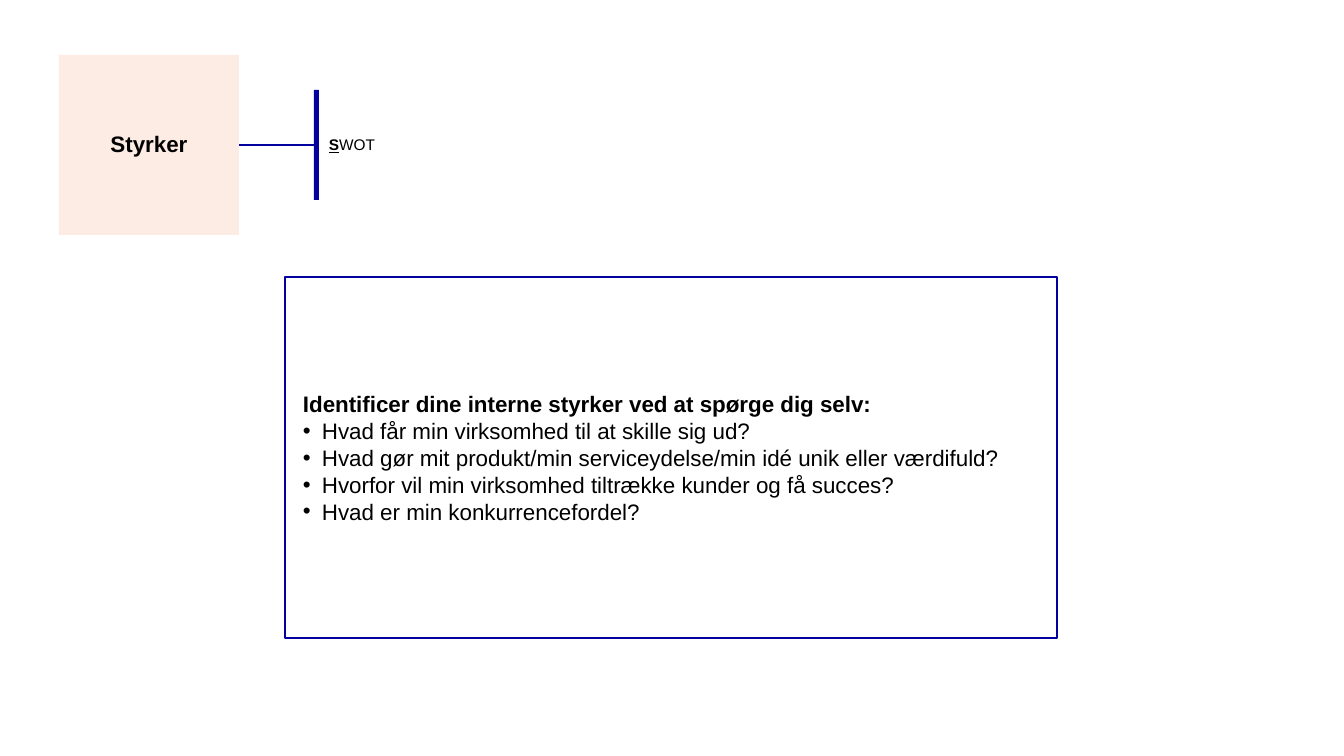
from lxml.etree import SubElement
from pptx import Presentation
from pptx.dml.color import RGBColor
from pptx.enum.shapes import MSO_CONNECTOR, MSO_SHAPE
from pptx.enum.text import MSO_ANCHOR, MSO_AUTO_SIZE, PP_ALIGN
from pptx.oxml.ns import qn
from pptx.util import Pt

EMU_PER_PX = 914400 / 100.8
BLUE = RGBColor(0x03, 0x00, 0x9F)
PEACH = RGBColor(0xFD, 0xEC, 0xE3)
BLACK = RGBColor(0, 0, 0)
FONT = "Arial"

HEADING = "Identificer dine interne styrker ved at spørge dig selv:"
QUESTIONS = [
    "Hvad får min virksomhed til at skille sig ud?",
    "Hvad gør mit produkt/min serviceydelse/min idé unik eller værdifuld?",
    "Hvorfor vil min virksomhed tiltrække kunder og få succes?",
    "Hvad er min konkurrencefordel?",
]


def px(length):
    return round(length * EMU_PER_PX)


def add_rectangle(slide, left, top, width, height, fill=None, line=None):
    shape = slide.shapes.add_shape(
        MSO_SHAPE.RECTANGLE, px(left), px(top), px(width), px(height))
    shape.shadow.inherit = False
    if fill is None:
        shape.fill.background()
    else:
        shape.fill.solid()
        shape.fill.fore_color.rgb = fill
    if line is None:
        shape.line.fill.background()
    else:
        shape.line.color.rgb = line
        shape.line.width = Pt(1)
    return shape


def add_run(paragraph, text, size, bold=False, underline=False):
    run = paragraph.add_run()
    run.text = text
    font = run.font
    font.name, font.size, font.color.rgb = FONT, Pt(size), BLACK
    font.bold, font.underline = bold, underline


def set_indent(paragraph, margin, indent=0, bullet=None):
    properties = paragraph._p.get_or_add_pPr()
    properties.set("marL", str(px(margin)))
    properties.set("indent", str(px(indent)))
    if bullet:
        SubElement(properties, qn("a:buFont")).set("typeface", FONT)
        SubElement(properties, qn("a:buChar")).set("char", bullet)


def add_question_panel(slide, left, top, width, height):
    panel = add_rectangle(slide, left, top, width, height, line=BLUE)
    frame = panel.text_frame
    frame.word_wrap = True
    frame.vertical_anchor = MSO_ANCHOR.MIDDLE

    # Heading
    heading = frame.paragraphs[0]
    heading.alignment = PP_ALIGN.LEFT
    set_indent(heading, 8)
    add_run(heading, HEADING, 16, bold=True)

    # Bulleted questions
    for question in QUESTIONS:
        paragraph = frame.add_paragraph()
        paragraph.alignment = PP_ALIGN.LEFT
        set_indent(paragraph, 27, -19, "•")
        add_run(paragraph, question, 16)


def add_strengths_header(slide, left, top, side):
    middle = top + side / 2

    # Titled square
    square = add_rectangle(slide, left, top, side, side, fill=PEACH)
    frame = square.text_frame
    frame.word_wrap = True
    frame.margin_left = frame.margin_right = 0
    frame.vertical_anchor = MSO_ANCHOR.MIDDLE
    title = frame.paragraphs[0]
    title.alignment = PP_ALIGN.CENTER
    title.line_spacing = 0.9
    add_run(title, "Styrker", 16, bold=True)

    # Vertical bar joined to the square
    bar_left, bar_width, bar_height = left + side + 75, 5, 110
    bar = add_rectangle(slide, bar_left, middle - bar_height / 2,
                        bar_width, bar_height, fill=BLUE)
    connector = slide.shapes.add_connector(
        MSO_CONNECTOR.STRAIGHT, px(bar_left), px(middle), px(left + side), px(middle))
    connector.begin_connect(bar, 1)
    connector.end_connect(square, 3)
    connector.line.color.rgb = BLUE
    connector.line.width = Pt(1)
    SubElement(connector._element.spPr, qn("a:effectLst"))

    # SWOT label with its first letter stressed
    label_height = 29
    label = slide.shapes.add_textbox(
        px(bar_left + bar_width), px(middle - label_height / 2), px(187), px(label_height))
    label.text_frame.word_wrap = True
    label.text_frame.auto_size = MSO_AUTO_SIZE.SHAPE_TO_FIT_TEXT
    paragraph = label.text_frame.paragraphs[0]
    add_run(paragraph, "S", 11, bold=True, underline=True)
    add_run(paragraph, "WOT", 11)


def main():
    presentation = Presentation()
    presentation.slide_width, presentation.slide_height = px(1344), px(756)
    slide = presentation.slides.add_slide(presentation.slide_layouts[6])
    add_question_panel(slide, 285, 277, 772, 361)
    add_strengths_header(slide, 59, 55, 180)
    presentation.save("out.pptx")


if __name__ == "__main__":
    main()
